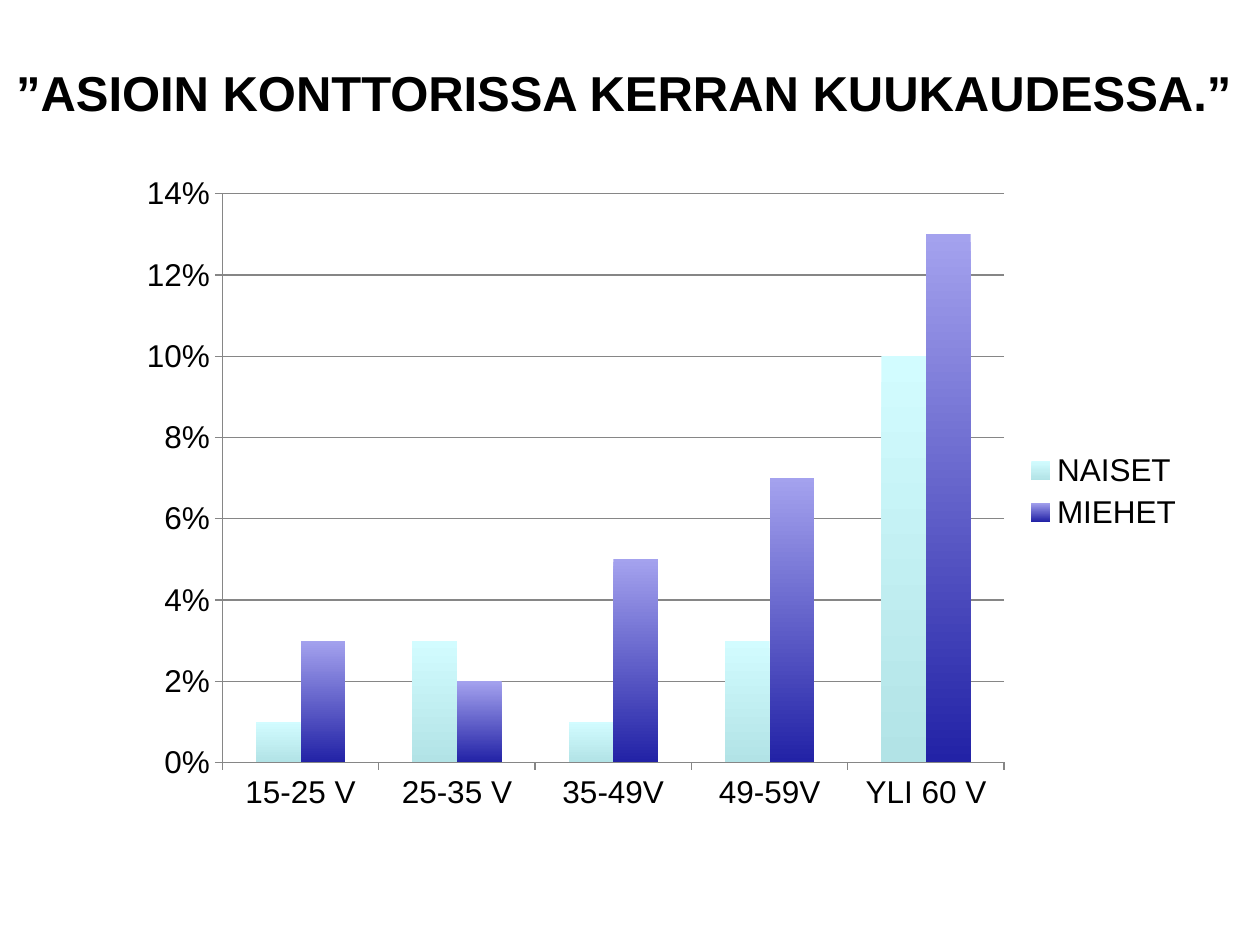
import pptx
import pptx.chart.data
import pptx.dml.color
import pptx.enum.chart
import pptx.enum.text
import pptx.oxml
import pptx.oxml.ns
import pptx.util

WIDE, HIGH = 10, 7.5
FONT = "Arial"
HUES = {
    "text": "000000",
    "line": "868686",
    "women": ("D2FCFF", "B2E3E6"),
    "men": ("A4A2EE", "2222A6"),
}
AGES = ["15-25 V", "25-35 V", "35-49V", "49-59V", "YLI 60 V"]
DATA = [
    ("NAISET", "women", [0.01, 0.03, 0.01, 0.03, 0.10]),
    ("MIEHET", "men", [0.03, 0.02, 0.05, 0.07, 0.13]),
]
PLOT = {"x": 0.09, "y": 0.05, "w": 0.73, "h": 0.86}


def tint(name):
    return pptx.dml.color.RGBColor.from_string(name)


def place(box):
    left, top, width, height = box
    return [pptx.util.Inches(n) for n in
            (left * WIDE, top * HIGH, width * WIDE, height * HIGH)]


def style(font, size, bold=False):
    font.name = FONT
    font.size = pptx.util.Pt(size)
    font.bold = bold
    font.color.rgb = tint(HUES["text"])


def add_title(slide, box, text):
    frame = slide.shapes.add_textbox(*place(box)).text_frame
    frame.word_wrap = True
    frame.margin_left = frame.margin_right = 0
    frame.vertical_anchor = pptx.enum.text.MSO_ANCHOR.TOP
    line = frame.paragraphs[0]
    line.text = text
    line.alignment = pptx.enum.text.PP_ALIGN.CENTER
    style(line.font, 28, True)


def set_plot(chart, parts):
    area = chart.plots[0]._element.getparent()
    for old in area.findall(pptx.oxml.ns.qn("c:layout")):
        area.remove(old)
    spots = "".join(f'<c:{key} val="{val}"/>' for key, val in parts.items())
    area.insert(0, pptx.oxml.parse_xml(
        f'<c:layout {pptx.oxml.ns.nsdecls("c")}><c:manualLayout>'
        '<c:layoutTarget val="inner"/>'
        '<c:xMode val="edge"/><c:yMode val="edge"/>'
        f'{spots}</c:manualLayout></c:layout>'))


def fade(fill, hues):
    fill.gradient()
    fill.gradient_angle = 270
    for stop, hue in zip(fill.gradient_stops, hues):
        stop.color.rgb = tint(hue)


def add_bars(slide, box):
    data = pptx.chart.data.CategoryChartData(number_format="0%")
    data.categories = AGES
    for name, _, vals in DATA:
        data.add_series(name, vals)
    kind = pptx.enum.chart.XL_CHART_TYPE.COLUMN_CLUSTERED
    chart = slide.shapes.add_chart(kind, *place(box), data).chart
    chart.has_title = False
    style(chart.font, 18)
    set_plot(chart, PLOT)

    chart.has_legend = True
    chart.legend.position = pptx.enum.chart.XL_LEGEND_POSITION.RIGHT
    chart.legend.include_in_layout = False

    plot = chart.plots[0]
    plot.gap_width = 150
    plot.overlap = 0
    plot.vary_by_categories = False
    for bars, (_, key, _) in zip(plot.series, DATA):
        fade(bars.format.fill, HUES[key])

    scale = chart.value_axis
    scale.minimum_scale, scale.maximum_scale = 0, 0.14
    scale.major_unit = 0.02
    scale.has_major_gridlines = True
    scale.tick_labels.number_format = "0%"
    scale.tick_labels.number_format_is_linked = False
    for axis in (scale, chart.category_axis):
        axis.major_tick_mark = pptx.enum.chart.XL_TICK_MARK.OUTSIDE
    for part in (scale, chart.category_axis, scale.major_gridlines):
        part.format.line.color.rgb = tint(HUES["line"])
        part.format.line.width = pptx.util.Pt(0.75)


def main():
    deck = pptx.Presentation()
    deck.slide_width = pptx.util.Inches(WIDE)
    deck.slide_height = pptx.util.Inches(HIGH)
    slide = deck.slides.add_slide(deck.slide_layouts[6])
    add_title(slide, (0, 0.06, 0.99, 0.11),
              "”ASIOIN KONTTORISSA KERRAN KUUKAUDESSA.”")
    add_bars(slide, (0.1, 0.17, 0.85, 0.7))
    deck.save("out.pptx")


if __name__ == "__main__":
    main()
